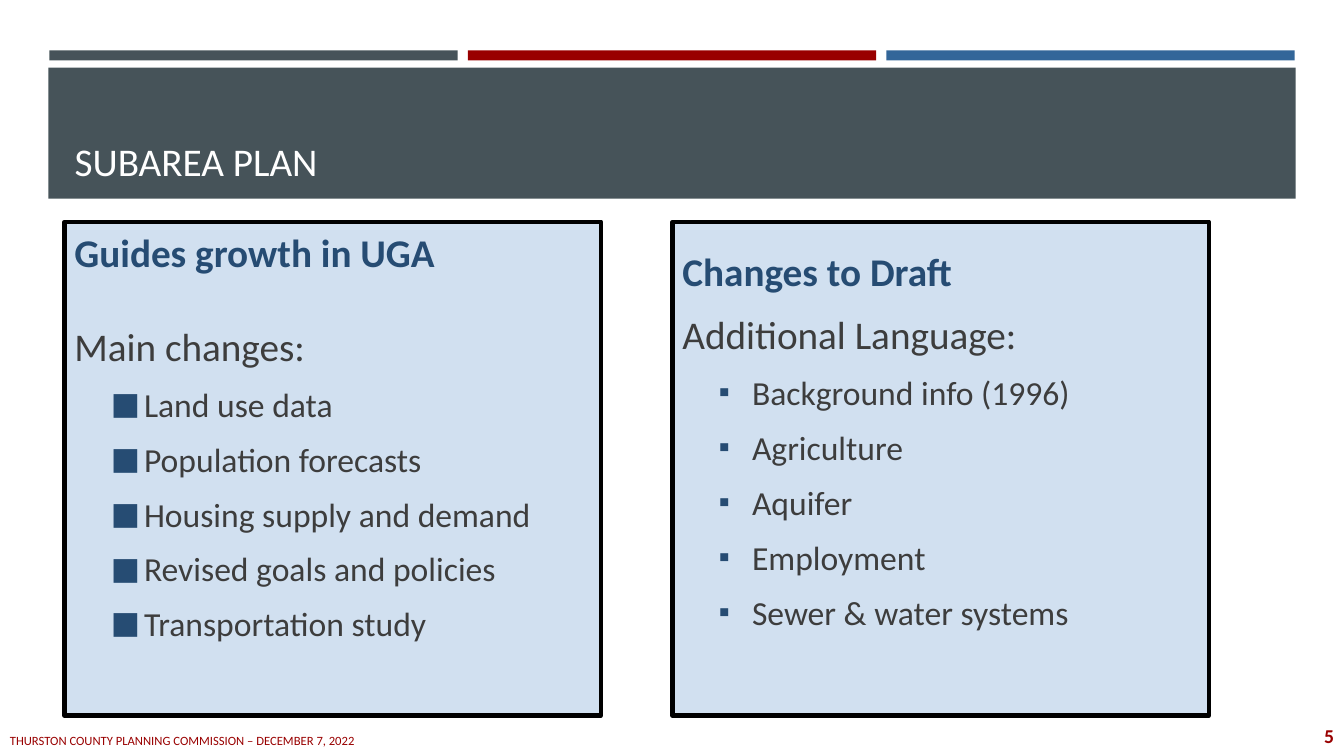
import pptx
import pptx.dml.color
import pptx.enum.shapes
import pptx.enum.text
import pptx.oxml.ns
import pptx.util
from dataclasses import dataclass
from lxml import etree

Inches = pptx.util.Inches
Pt = pptx.util.Pt
ALIGN = pptx.enum.text.PP_ALIGN
ANCHOR = pptx.enum.text.MSO_ANCHOR


@dataclass(frozen=True)
class Theme:
    font: str = "Calibri"
    slate: str = "465359"
    red: str = "990000"
    blue: str = "336699"
    navy: str = "264C73"
    panel: str = "D1E0F0"
    body: str = "3D3D3D"
    white: str = "FFFFFF"
    black: str = "000000"
    heading_size: int = 28
    bullet_size: int = 24
    number_size: int = 14
    footer_size: int = 9


def rgb(color):
    return pptx.dml.color.RGBColor.from_string(color)


class PageBuilder:
    def __init__(self, page, theme):
        self.page = page
        self.theme = theme

    def rectangle(self, left, top, width, height, fill, border=None):
        box = self.page.shapes.add_shape(
            pptx.enum.shapes.MSO_SHAPE.RECTANGLE,
            Inches(left), Inches(top), Inches(width), Inches(height))
        box.shadow.inherit = False
        box.fill.solid()
        box.fill.fore_color.rgb = rgb(fill)
        if border:
            box.line.color.rgb = rgb(border)
            box.line.width = Pt(3)
        else:
            box.line.fill.background()
        return box

    def span(self, para, text, size, color, bold=False):
        span = para.add_run()
        span.text = text
        span.font.name = self.theme.font
        span.font.size = Pt(size)
        span.font.bold = bold
        span.font.color.rgb = rgb(color)

    def title(self, text, left, top, width, height):
        box = self.page.shapes.title
        box.left, box.top = Inches(left), Inches(top)
        box.width, box.height = Inches(width), Inches(height)
        frame = box.text_frame
        frame.auto_size = pptx.enum.text.MSO_AUTO_SIZE.NONE
        frame.vertical_anchor = ANCHOR.BOTTOM
        para = frame.paragraphs[0]
        para.alignment = ALIGN.LEFT
        self.span(para, text, self.theme.heading_size, self.theme.white)
        # Bring the title in front of its band
        self.page.shapes._spTree.append(box._element)

    def label(self, text, left, top, width, height, size, align, bold=False):
        box = self.page.shapes.add_textbox(
            Inches(left), Inches(top), Inches(width), Inches(height))
        frame = box.text_frame
        frame.word_wrap = True
        frame.vertical_anchor = ANCHOR.MIDDLE
        para = frame.paragraphs[0]
        para.alignment = align
        self.span(para, text, size, self.theme.red, bold)

    def bullet(self, para, symbol):
        props = para._p.get_or_add_pPr()
        props.set("marL", str(Inches(0.69)))
        props.set("indent", str(Inches(-0.33)))
        qn = pptx.oxml.ns.qn
        color = etree.SubElement(props, qn("a:buClr"))
        etree.SubElement(color, qn("a:srgbClr"), val=self.theme.navy)
        etree.SubElement(props, qn("a:buSzPct"), val="92000")
        etree.SubElement(props, qn("a:buFont"), typeface=self.theme.font)
        etree.SubElement(props, qn("a:buChar"), char=symbol)

    def panel(self, left, inset, heading, lead, lead_gap, symbol, items):
        theme = self.theme
        box = self.rectangle(left, 2.2, 5.32, 4.9, theme.panel, theme.black)
        frame = box.text_frame
        frame.word_wrap = True
        frame.vertical_anchor = ANCHOR.TOP
        frame.margin_top = Inches(inset)
        rows = [(heading, theme.heading_size, theme.navy, 0),
                (lead, theme.heading_size, theme.body, lead_gap)]
        rows += [(item, theme.bullet_size, theme.body, 4.4) for item in items]
        for index, (text, size, color, gap) in enumerate(rows):
            para = frame.add_paragraph() if index else frame.paragraphs[0]
            para.alignment = ALIGN.LEFT
            para.space_before = Pt(gap)
            para.space_after = Pt(6)
            if index > 1:
                self.bullet(para, symbol)
            self.span(para, text, size, color, bold=index == 0)


def main():
    deck = pptx.Presentation()
    deck.slide_width, deck.slide_height = Inches(13.33), Inches(7.5)
    theme = Theme()
    builder = PageBuilder(deck.slides.add_slide(deck.slide_layouts[5]), theme)

    # Colour strips above the title band
    for column, color in enumerate((theme.slate, theme.red, theme.blue)):
        builder.rectangle(0.49 + column * 4.15, 0.5, 4.05, 0.1, color)

    # Title band
    builder.rectangle(0.48, 0.67, 12.37, 1.3, theme.slate)
    builder.title("SUBAREA PLAN", 0.64, 0.77, 12.06, 1.11)

    # Content panels
    builder.panel(0.64, 0.07, "Guides growth in UGA", "Main changes:", 27, "■", [
        "Land use data", "Population forecasts", "Housing supply and demand",
        "Revised goals and policies", "Transportation study"])
    builder.panel(6.67, 0.25, "Changes to Draft", "Additional Language:", 5.6, "▪", [
        "Background info (1996)", "Agriculture", "Aquifer", "Employment",
        "Sewer & water systems"])

    # Page number and footer
    builder.label("5", 12.18, 7.1, 1.15, 0.4, theme.number_size, ALIGN.RIGHT, bold=True)
    builder.label("THURSTON COUNTY PLANNING COMMISSION – DECEMBER 7, 2022",
                  0, 7.2, 7.56, 0.3, theme.footer_size, ALIGN.LEFT)

    deck.save("out.pptx")


if __name__ == "__main__":
    main()
